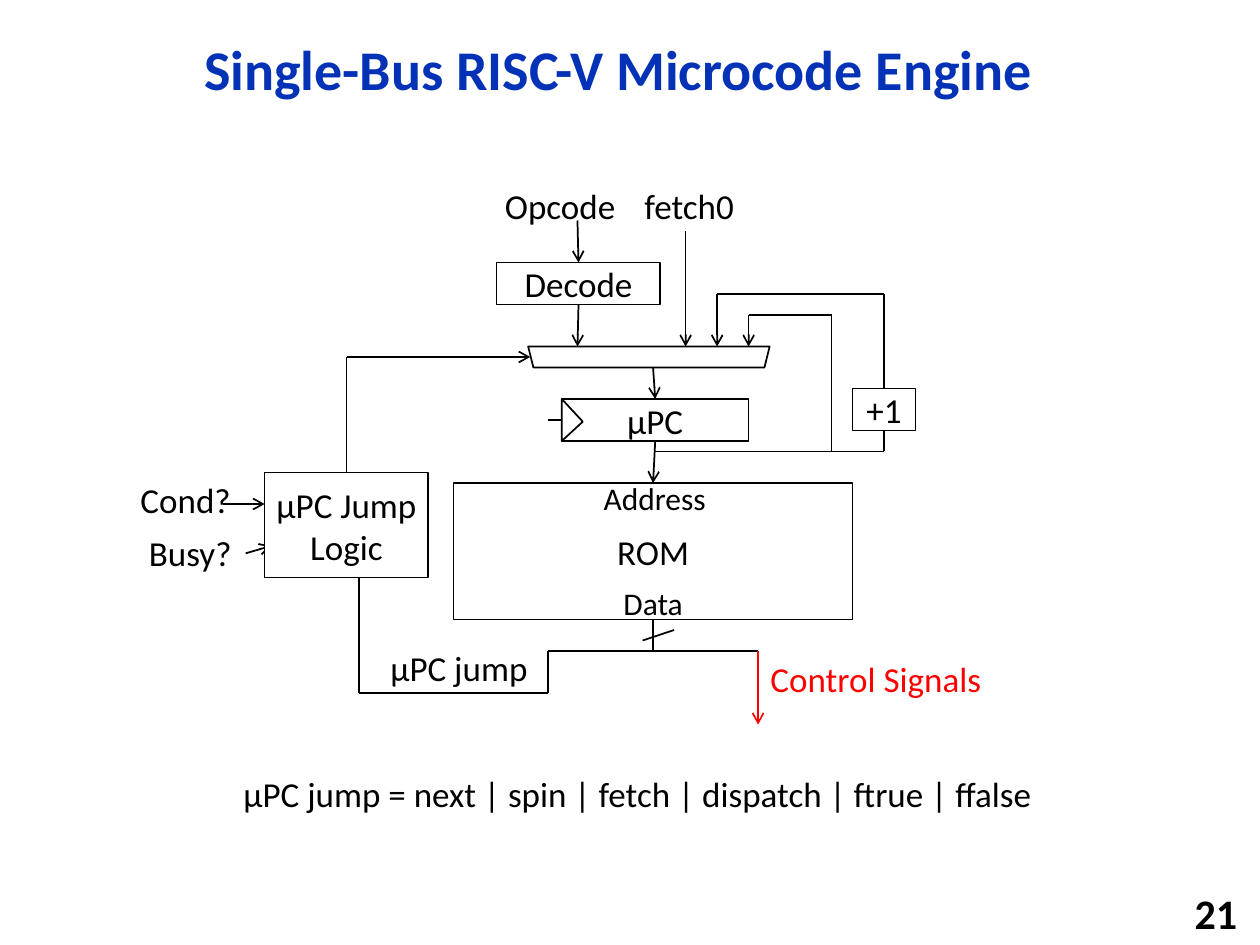
from itertools import pairwise

from pptx import Presentation
from pptx import util as u
from pptx.dml.color import RGBColor
from pptx.enum import shapes, text
from pptx.oxml.ns import qn
from lxml import etree

COLORS = {"ink": "000000", "paper": "FFFFFF", "title": "0332B7", "control": "FF0000"}
COLUMNS, ROWS = 120, 90
TOP, LEFT, BOTTOM = 0, 1, 2
SITES = ((0.5, 0), (0, 0.5), (0.5, 1), (1, 0.5))
NO_INSETS = dict.fromkeys(("margin_left", "margin_top", "margin_right", "margin_bottom"), 0)


def apply(target, values):
    for name, value in values.items():
        setattr(target, name, value)


class Diagram:
    def __init__(self, deck, title, area):
        self.cell_width = deck.slide_width / COLUMNS
        self.cell_height = deck.slide_height / ROWS
        self.slide = deck.slides.add_slide(deck.slide_layouts[5])
        heading = self.slide.shapes.title
        apply(heading, dict(zip(("left", "top", "width", "height"), self.place(*area))))
        self.letter(heading, title, 32, "title", bold=True,
                    frame={"vertical_anchor": text.MSO_ANCHOR.MIDDLE, "word_wrap": True,
                           "auto_size": text.MSO_AUTO_SIZE.NONE},
                    paragraph={"alignment": text.PP_ALIGN.CENTER, "line_spacing": 0.9})

    def place(self, *lengths):
        units = (self.cell_width, self.cell_height) * 2
        return [round(length * unit) for length, unit in zip(lengths, units)]

    def letter(self, holder, words, size, color, bold=False, frame=None, paragraph=None):
        apply(holder.text_frame, frame or {})
        line = holder.text_frame.paragraphs[0]
        apply(line, paragraph or {})
        run = line.add_run()
        run.text = words
        apply(run.font, {"name": "Calibri", "size": u.Pt(size), "bold": bold})
        run.font.color.rgb = RGBColor.from_string(COLORS[color])

    def label(self, words, area, size=20, color="ink", bold=False, frame=None, paragraph=None):
        box = self.slide.shapes.add_textbox(*self.place(*area))
        self.letter(box, words, size, color, bold, {"word_wrap": False, **(frame or {})}, paragraph)

    def block(self, area, words="", kind=shapes.MSO_SHAPE.RECTANGLE, rotation=0):
        part = self.slide.shapes.add_shape(kind, *self.place(*area))
        part.shadow.inherit = False
        part.rotation = rotation
        part.fill.solid()
        part.fill.fore_color.rgb = RGBColor.from_string(COLORS["paper"])
        self.stroke(part.line, "ink")
        if words:
            self.letter(part, words, 20, "ink",
                        frame={**NO_INSETS, "word_wrap": True,
                               "vertical_anchor": text.MSO_ANCHOR.MIDDLE},
                        paragraph={"alignment": text.PP_ALIGN.CENTER})
        return part

    def stroke(self, line, color):
        line.color.rgb = RGBColor.from_string(COLORS[color])
        line.width = u.Pt(1)

    def locate(self, stop):
        owner, site = stop
        if isinstance(owner, (int, float)):
            return self.place(*stop)
        across, down = SITES[site]
        return [round(owner.left + across * owner.width), round(owner.top + down * owner.height)]

    def wire(self, *stops, arrow=False, color="ink"):
        for start, end in pairwise(stops):
            segment = self.slide.shapes.add_connector(
                shapes.MSO_CONNECTOR.STRAIGHT, *self.locate(start), *self.locate(end))
            self.stroke(segment.line, color)
            properties = segment._element.spPr
            etree.SubElement(properties, qn("a:effectLst"))
            for stop, join in ((start, segment.begin_connect), (end, segment.end_connect)):
                if not isinstance(stop[0], (int, float)):
                    join(*stop)
        if arrow:
            etree.SubElement(properties.find(qn("a:ln")), qn("a:tailEnd"), type="arrow")


def main():
    deck = Presentation()
    deck.slide_width, deck.slide_height = u.Inches(10), u.Inches(7.5)
    engine = Diagram(deck, "Single-Bus RISC-V Microcode Engine", (11, 2, 95.8, 9.7))
    engine.label("21", (94, 85, 25, 3.8), 24, bold=True,
                 frame={"vertical_anchor": text.MSO_ANCHOR.MIDDLE},
                 paragraph={"alignment": text.PP_ALIGN.RIGHT})

    engine.wire((21.2, 48), (25.2, 48), arrow=True)
    engine.wire((23.4, 52.7), (25.8, 52), arrow=True)

    micro_pc = engine.block((53.5, 38, 17.8, 4), "µPC")
    clock = engine.block((52.5, 39, 4, 2), kind=shapes.MSO_SHAPE.ISOSCELES_TRIANGLE, rotation=90)
    clock.adjustments[0] = 0.54
    decode = engine.block((47.3, 25, 15.6, 4), "Decode")
    rom = engine.block((43.2, 46, 38, 13), "ROM")
    engine.block((50.3, 33, 23, 2), kind=shapes.MSO_SHAPE.TRAPEZOID, rotation=180)
    increment = engine.block((81.2, 37, 6, 4), "+1")
    jump_logic = engine.block((25.2, 45, 15.6, 10), "µPC Jump Logic")

    engine.wire((micro_pc, LEFT), (52.2, 40))
    engine.wire((55, 21), (decode, TOP), arrow=True)
    engine.wire((decode, BOTTOM), (55, 33), arrow=True)
    engine.wire((65.3, 22), (65.3, 33), arrow=True)
    engine.wire((62.2, 35), (micro_pc, TOP), arrow=True)
    engine.wire((micro_pc, BOTTOM), (rom, TOP), arrow=True)
    engine.wire((increment, BOTTOM), (84.2, 43), (62.3, 43))
    engine.wire((increment, TOP), (84.2, 28), (68.3, 28), (68.3, 33), arrow=True)
    engine.wire((79.2, 43), (79.2, 30), (71.3, 30), (71.3, 33), arrow=True)
    engine.wire((jump_logic, TOP), (33, 34), (50.5, 34), arrow=True)
    engine.wire((rom, BOTTOM), (62.2, 62))
    engine.wire((61.2, 61), (64.2, 60))
    engine.wire((72.2, 62), (52.2, 62), (52.2, 66), (34.2, 66), (34.2, 55))
    engine.wire((72.2, 62), (72.2, 69), arrow=True, color="control")

    for words, left, top, width in (
        ("Opcode", 46.9, 17, 13.1),
        ("fetch0", 60.2, 17, 11.2),
        ("Cond?", 12.2, 45, 11),
        ("Busy?", 13, 50, 10.4),
        ("µPC jump", 36, 61, 15.6),
        ("µPC jump = next | spin | fetch | dispatch | ftrue | ffalse", 22, 73, 78.4),
    ):
        engine.label(words, (left, top, width, 5.3))
    engine.label("Address", (56.3, 45, 12.4, 4.8), 18)
    engine.label("Data", (58.2, 55, 8.2, 4.8), 18)
    engine.label("Control Signals", (72.2, 62, 22.8, 5.3), color="control")

    deck.save("out.pptx")


if __name__ == "__main__":
    main()
